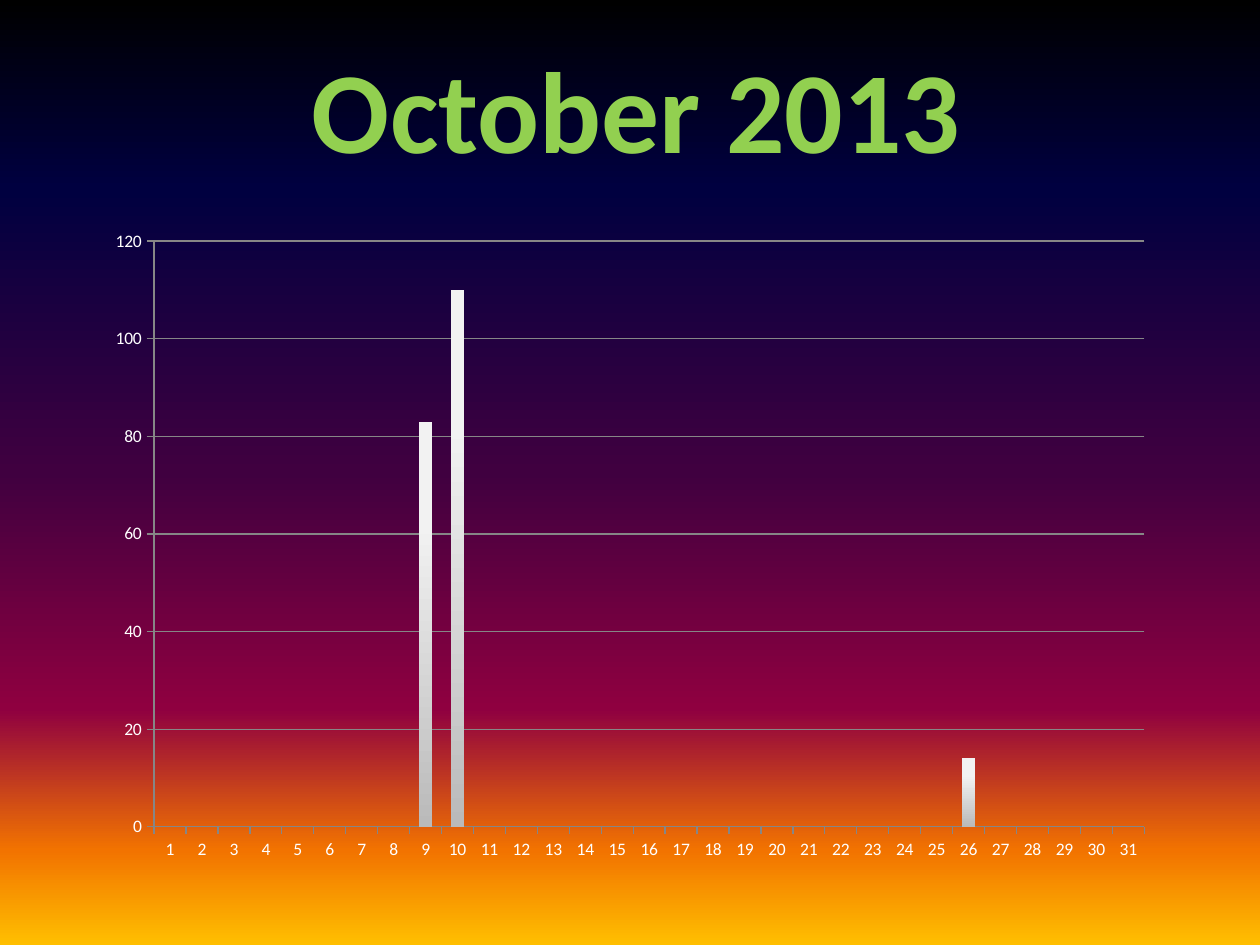
from lxml.etree import SubElement
from pptx import Presentation
from pptx.chart.data import CategoryChartData
from pptx.dml.color import RGBColor
from pptx.enum.chart import XL_CHART_TYPE, XL_TICK_MARK
from pptx.enum.text import MSO_ANCHOR, MSO_AUTO_SIZE, PP_ALIGN
from pptx.oxml.ns import qn
from pptx.util import Cm, Pt

COLORS = {"title": "92D050", "white": "FFFFFF", "grid": "868686"}
SKY = [(0, "000000"), (20, "000040"), (50, "400040"),
       (75, "8F0040"), (90, "F27300"), (100, "FFBF00")]
BAR = [(0, "F2F2F2"), (25, "F2F2F2"), (100, "BABABA")]
DAY_VALUES = {9: 83, 10: 110, 26: 14}
FONT = "Calibri"


def set_gradient(fill, parent, stops):
    """Fill top to bottom with any number of (percent, colour) stops."""
    fill.gradient()
    fill.gradient_angle = 270
    stop_list = parent.find(".//" + qn("a:gsLst"))
    for old in list(stop_list):
        stop_list.remove(old)
    for percent, color in stops:
        stop = SubElement(stop_list, qn("a:gs"), pos=str(percent * 1000))
        SubElement(stop, qn("a:srgbClr"), val=color)


prs = Presentation()
prs.slide_width, prs.slide_height = Cm(25.4), Cm(19.05)
s = prs.slides.add_slide(prs.slide_layouts[6])
set_gradient(s.background.fill, s.element, SKY)

# Title
sp = s.shapes.add_textbox(Cm(5.97), Cm(0.64), Cm(13.72), Cm(3.07))
tf = sp.text_frame
tf.word_wrap = False
tf.auto_size = MSO_AUTO_SIZE.SHAPE_TO_FIT_TEXT
tf.vertical_anchor = MSO_ANCHOR.TOP
p = tf.paragraphs[0]
p.alignment = PP_ALIGN.CENTER
r = p.add_run()
r.text = "October 2013"
r.font.name, r.font.size, r.font.bold = FONT, Pt(66), True
r.font.color.rgb = RGBColor.from_string(COLORS["title"])
outline = SubElement(r.font._element, qn("a:ln"), w=str(Pt(1.4)))
outline_fill = SubElement(outline, qn("a:solidFill"))
SubElement(outline_fill, qn("a:srgbClr"), val=COLORS["white"])
r.font._element.insert(0, outline)

# Daily column chart
days = range(1, 32)
data = CategoryChartData()
data.categories = [str(day) for day in days]
data.add_series("Series 1", [DAY_VALUES.get(day, 0) for day in days])
chart = s.shapes.add_chart(XL_CHART_TYPE.COLUMN_CLUSTERED, Cm(1.9), Cm(4.4),
                           Cm(21.6), Cm(13.18), data).chart
chart.has_legend = False
chart.has_title = False
chart.font.name, chart.font.size = FONT, Pt(10)
chart.font.color.rgb = RGBColor.from_string(COLORS["white"])

plot = chart.plots[0]
plot.gap_width = 150
plot.vary_by_categories = False
bars = plot.series[0]
set_gradient(bars.format.fill, bars._element, BAR)

value_axis = chart.value_axis
value_axis.minimum_scale, value_axis.maximum_scale = 0, 120
value_axis.major_unit = 20
value_axis.has_major_gridlines = True
for axis in (chart.category_axis, value_axis):
    axis.major_tick_mark = XL_TICK_MARK.OUTSIDE
    axis.minor_tick_mark = XL_TICK_MARK.NONE
for line in (chart.category_axis.format.line, value_axis.format.line,
             value_axis.major_gridlines.format.line):
    line.color.rgb = RGBColor.from_string(COLORS["grid"])
    line.width = Pt(0.75)

prs.save("out.pptx")
